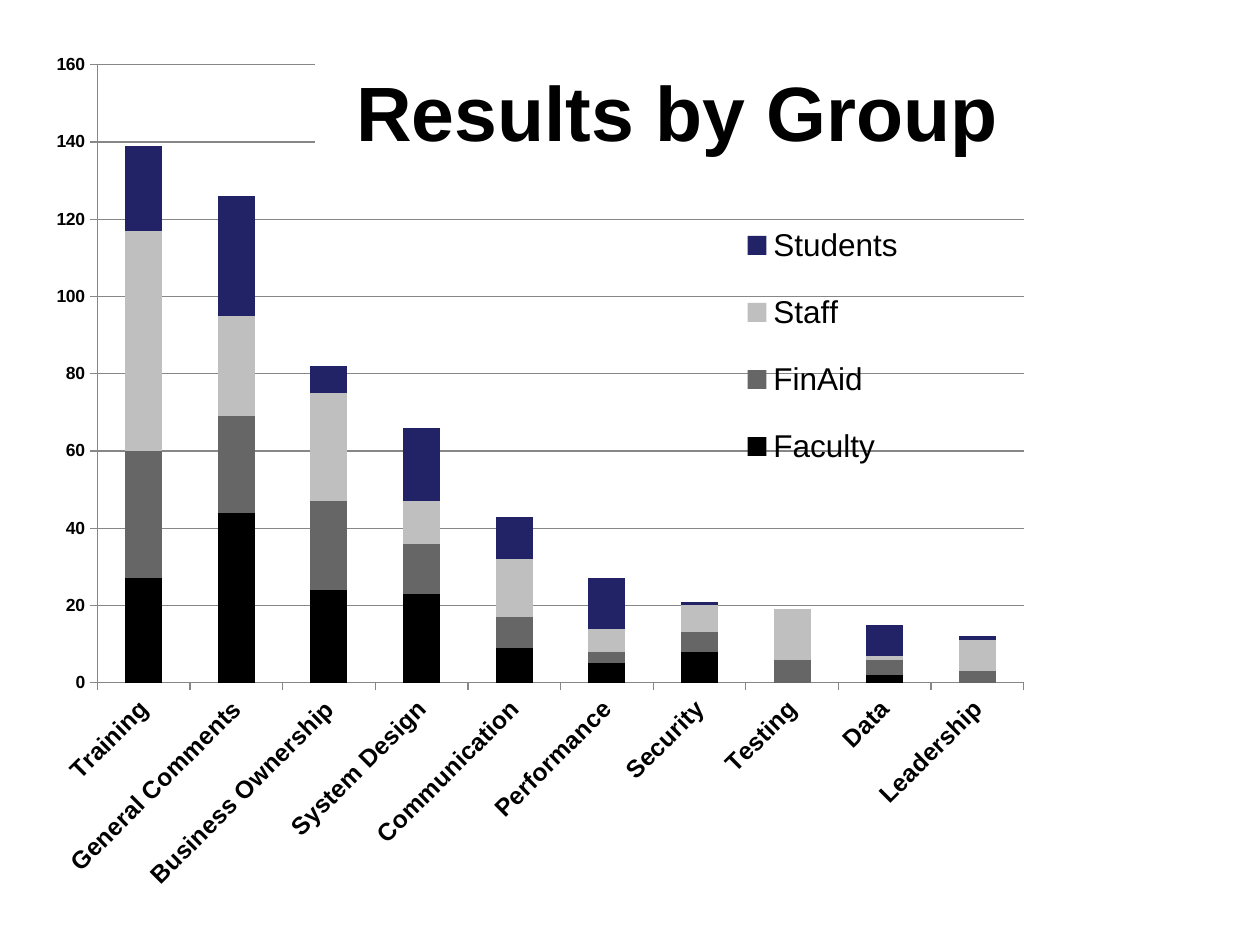
import pptx
import pptx.util
import pptx.chart.data
import pptx.dml.color
import pptx.enum.chart
import pptx.enum.text
import pptx.oxml
import pptx.oxml.ns

RGBColor = pptx.dml.color.RGBColor
BLACK = RGBColor(0, 0, 0)
WHITE = RGBColor(255, 255, 255)
DARK = RGBColor(0x66, 0x66, 0x66)
LIGHT = RGBColor(0xBF, 0xBF, 0xBF)
NAVY = RGBColor(0x22, 0x22, 0x67)
RULE = RGBColor(0x87, 0x87, 0x87)

topics = ["Training", "General Comments", "Business Ownership", "System Design",
          "Communication", "Performance", "Security", "Testing", "Data", "Leadership"]
groups = [
    ("Faculty", BLACK, [27, 44, 24, 23, 9, 5, 8, 0, 2, 0]),
    ("FinAid", DARK, [33, 25, 23, 13, 8, 3, 5, 6, 4, 3]),
    ("Staff", LIGHT, [57, 26, 28, 11, 15, 6, 7, 13, 1, 8]),
    ("Students", NAVY, [22, 31, 7, 19, 11, 13, 1, 0, 8, 1]),
]

deck = pptx.Presentation()
deck.slide_width = pptx.util.Inches(10)
deck.slide_height = pptx.util.Inches(7.5)
slide = deck.slides.add_slide(deck.slide_layouts[6])


def area(left, top, width, height):
    wide, high = deck.slide_width, deck.slide_height
    return int(left * wide), int(top * high), int(width * wide), int(height * high)


def place(parent, inner, left, top, width, height):
    for old in parent.findall(pptx.oxml.ns.qn("c:layout")):
        parent.remove(old)
    target = '<c:layoutTarget val="inner"/>' if inner else ""
    layout = pptx.oxml.parse_xml(
        f'<c:layout {pptx.oxml.ns.nsdecls("c")}><c:manualLayout>{target}'
        '<c:xMode val="edge"/><c:yMode val="edge"/>'
        f'<c:x val="{left}"/><c:y val="{top}"/><c:w val="{width}"/><c:h val="{height}"/>'
        '</c:manualLayout></c:layout>')
    parent.insert(0 if inner else 1, layout)


data = pptx.chart.data.CategoryChartData()
data.categories = topics
for name, color, counts in groups:
    data.add_series(name, counts)
chart = slide.shapes.add_chart(
    pptx.enum.chart.XL_CHART_TYPE.COLUMN_STACKED, *area(0.026, 0.04, 0.95, 0.92), data).chart
chart.has_title = False
chart.font.name = "Arial"
chart.font.size = pptx.util.Pt(10)
chart.font.color.rgb = BLACK

plot = chart.plots[0]
plot.vary_by_categories = False
plot.gap_width = 150
plot.overlap = 100
for bar, (name, color, counts) in zip(plot.series, groups):
    bar.format.fill.solid()
    bar.format.fill.fore_color.rgb = color

for axis, size in ((chart.category_axis, 14), (chart.value_axis, 10)):
    axis.major_tick_mark = pptx.enum.chart.XL_TICK_MARK.OUTSIDE
    axis.minor_tick_mark = pptx.enum.chart.XL_TICK_MARK.NONE
    axis.format.line.color.rgb = RULE
    axis.format.line.width = pptx.util.Pt(0.75)
    font = axis.tick_labels.font
    font.name = "Arial"
    font.size = pptx.util.Pt(size)
    font.bold = True
    font.color.rgb = BLACK
body = chart.category_axis._element.find(pptx.oxml.ns.qn("c:txPr"))
body.find(pptx.oxml.ns.qn("a:bodyPr")).set("rot", "-2700000")

scale = chart.value_axis
scale.minimum_scale = 0
scale.maximum_scale = 160
scale.major_unit = 20
scale.has_major_gridlines = True
scale.major_gridlines.format.line.color.rgb = RULE
scale.major_gridlines.format.line.width = pptx.util.Pt(0.75)

chart.has_legend = True
legend = chart.legend
legend.position = pptx.enum.chart.XL_LEGEND_POSITION.RIGHT
legend.include_in_layout = False
legend.font.name = "Arial"
legend.font.size = pptx.util.Pt(18)
legend.font.color.rgb = BLACK
place(plot._element.getparent(), True, 0.054, 0.031, 0.774, 0.711)
place(legend._element, False, 0.585, 0.182, 0.15, 0.345)

title = slide.shapes.add_textbox(*area(0.25, 0.056, 0.575, 0.123))
title.fill.solid()
title.fill.fore_color.rgb = WHITE
frame = title.text_frame
frame.word_wrap = True
frame.vertical_anchor = pptx.enum.text.MSO_ANCHOR.MIDDLE
frame.text = "Results by Group"
line = frame.paragraphs[0]
line.alignment = pptx.enum.text.PP_ALIGN.CENTER
font = line.runs[0].font
font.name = "Arial"
font.size = pptx.util.Pt(44)
font.bold = True
font.color.rgb = BLACK

deck.save("out.pptx")
